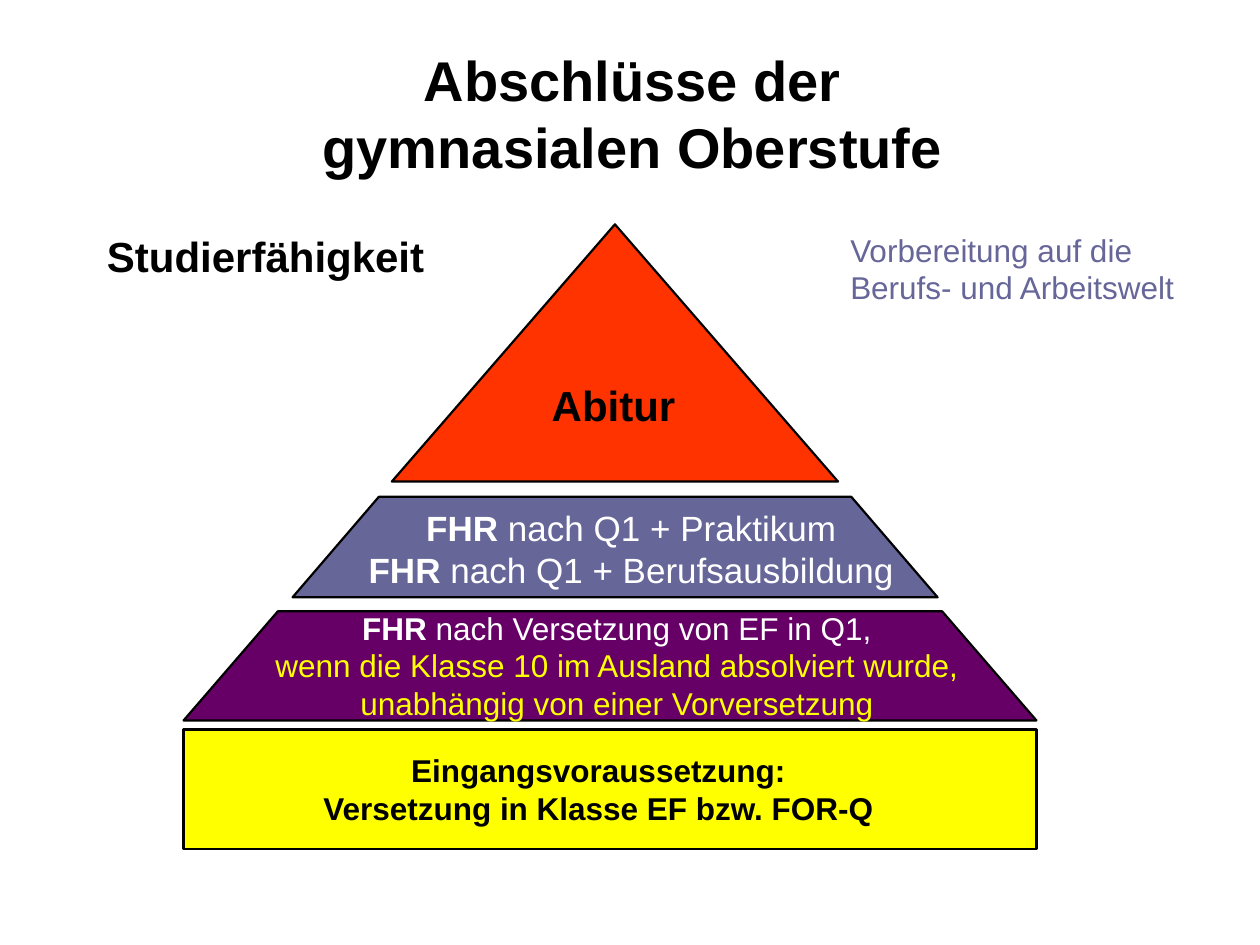
from pptx import Presentation
from pptx.dml.color import RGBColor
from pptx.enum.shapes import MSO_SHAPE as Shape
from pptx.enum.text import MSO_AUTO_SIZE as AutoSize, PP_ALIGN as Align
from pptx.util import Pt

COLORS = {
    "black": "000000",
    "white": "FFFFFF",
    "red": "FF3300",
    "slate": "666699",
    "purple": "660066",
    "yellow": "FFFF00",
}


def color(name):
    return RGBColor.from_string(COLORS[name])


def add_level(s, kind, box, fill, slant=None):
    """Draw one outlined level of the pyramid."""
    sp = s.shapes.add_shape(kind, *map(Pt, box))
    sp.shadow.inherit = False
    sp.fill.solid()
    sp.fill.fore_color.rgb = color(fill)
    sp.line.color.rgb = color("black")
    sp.line.width = Pt(1.25)
    if slant is not None:
        sp.adjustments[0] = slant


def add_text(s, box, paragraphs, size, fills, bold=None, align=Align.CENTER):
    """Add a text box; a paragraph is a list of (text, bold) runs or a string."""
    tf = s.shapes.add_textbox(*map(Pt, box)).text_frame
    tf.word_wrap = True
    tf.auto_size = AutoSize.SHAPE_TO_FIT_TEXT
    for i, (content, fill) in enumerate(zip(paragraphs, fills)):
        p = tf.add_paragraph() if i else tf.paragraphs[0]
        p.alignment = align
        p.font.name = "Arial"
        p.font.size = Pt(size)
        p.font.bold = bold
        p.font.color.rgb = color(fill)
        runs = [(content, None)] if isinstance(content, str) else content
        for text, run_bold in runs:
            if text == "\n":
                p.add_line_break()
                continue
            r = p.add_run()
            r.text = text
            r.font.name = "Arial"
            r.font.size = Pt(size)
            r.font.bold = bold if run_bold is None else run_bold
            r.font.color.rgb = color(fill)
    return tf


def main():
    prs = Presentation()
    prs.slide_width, prs.slide_height = Pt(720), Pt(540)
    s = prs.slides.add_slide(prs.slide_layouts[6])

    # Title
    add_text(s, (167.8, 22.3, 387.4, 85), ["Abschlüsse der gymnasialen Oberstufe"],
             32, ["black"], bold=True)

    # Top: Abitur
    add_level(s, Shape.ISOSCELES_TRIANGLE, (223.9, 128.2, 255, 147), "red")
    add_text(s, (308.2, 213.1, 103, 43.2), ["Abitur"], 24, ["black"],
             bold=True, align=Align.LEFT)

    # Second level: FHR after Q1
    add_level(s, Shape.TRAPEZOID, (167.2, 283.9, 368.6, 57.4), "slate", 0.859)
    add_text(s, (185.8, 285.8, 349.9, 49),
             [[("FHR ", True), ("nach Q1 + Praktikum", False), ("\n", None),
               ("FHR", True), (" nach Q1 + Berufsausbildung", False)]],
             20, ["white"])

    # Third level: FHR after moving up into Q1
    add_level(s, Shape.TRAPEZOID, (104.9, 349.3, 487.4, 62.4), "purple", 0.864)
    tf = add_text(s, (139, 344.2, 427, 72.7),
                  [[("FHR ", True), ("nach Versetzung von EF in Q1,", False)],
                   "wenn die Klasse 10 im Ausland absolviert wurde, "
                   "unabhängig von einer Vorversetzung"],
                  18, ["white", "yellow"])
    tf.paragraphs[-1].space_after = Pt(6)

    # Base: entry requirement
    add_level(s, Shape.RECTANGLE, (104.9, 416.9, 487.4, 68.4), "yellow")
    add_text(s, (118.1, 425.5, 447.8, 51.1),
             ["Eingangsvoraussetzung:", "Versetzung in Klasse EF bzw. FOR-Q"],
             18, ["black", "black"], bold=True)

    # Side labels
    add_text(s, (54, 128.2, 209.5, 36), ["Studierfähigkeit"], 24, ["black"],
             bold=True, align=Align.LEFT)
    add_text(s, (478.8, 128.2, 203.8, 51.1),
             ["Vorbereitung auf die Berufs- und Arbeitswelt"], 18, ["slate"],
             align=Align.LEFT)

    prs.save("out.pptx")


if __name__ == "__main__":
    main()
